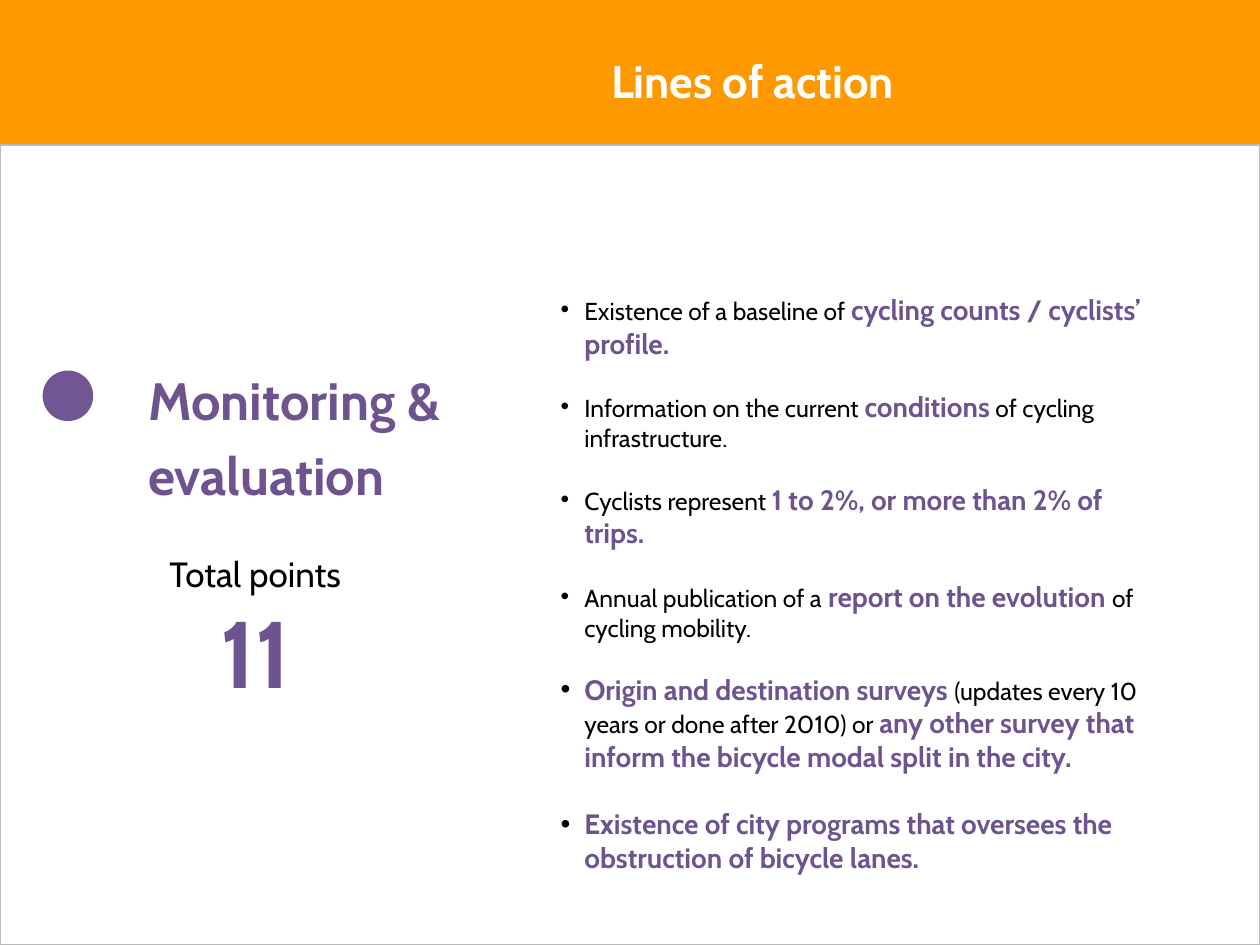
from lxml import etree
from pptx import Presentation
from pptx import util as u
from pptx.dml.color import RGBColor
from pptx.enum import shapes, text
from pptx.oxml.ns import qn

ORANGE = RGBColor(0xFF, 0x99, 0x00)
WHITE = RGBColor(0xFF, 0xFF, 0xFF)
GREY = RGBColor(0xBA, 0xBA, 0xBA)
BLACK = RGBColor(0x00, 0x00, 0x00)
PURPLE = RGBColor(0x6E, 0x53, 0x8F)
DOT_PURPLE = RGBColor(0x72, 0x56, 0x94)
FONT = "Cabin"

HEADING = "Lines of action"
TOPIC = "Monitoring & evaluation"
SCORE = [("Total points", 20, BLACK, False), ("11", 54, PURPLE, True)]
PLAIN, KEY = (14, BLACK, False), (16, PURPLE, True)
ACTIONS = [
    (0, [("Existence of a baseline of ", PLAIN),
         ("cycling counts / cyclists’ profile.", KEY)]),
    (17, [("Information on the current ", PLAIN), ("conditions", KEY),
          (" of cycling infrastructure.", PLAIN)]),
    (17, [("Cyclists represent ", PLAIN),
          ("1 to 2%, or more than 2% of trips.", KEY)]),
    (17, [("Annual publication of a", PLAIN),
          (" report on the evolution ", KEY),
          ("of cycling mobility.", PLAIN)]),
    (17, [("Origin and destination surveys ", KEY),
          ("(updates every 10 years or done after 2010) or ", PLAIN),
          ("any other survey that inform the bicycle modal split in the city.", KEY)]),
    (19.5, [("Existence of city programs that oversees the obstruction of "
             "bicycle lanes.", KEY)]),
]


def place(box, left, top, width, height):
    box.left, box.top = u.Cm(left), u.Cm(top)
    box.width, box.height = u.Cm(width), u.Cm(height)


def set_frame(box, inset, anchor=text.MSO_ANCHOR.TOP):
    frame = box.text_frame
    frame.word_wrap = True
    frame.auto_size = text.MSO_AUTO_SIZE.NONE
    frame.vertical_anchor = anchor
    frame.margin_left = frame.margin_right = u.Cm(0.25)
    frame.margin_top = frame.margin_bottom = u.Cm(inset)
    return frame


def style(font, size, color, bold):
    font.name, font.size, font.bold = FONT, u.Pt(size), bold
    font.color.rgb = color


def add_bullet(paragraph, color):
    props = paragraph._p.get_or_add_pPr()
    props.set("marL", str(u.Cm(0.48)))
    props.set("indent", str(-u.Cm(0.48)))
    tint = etree.SubElement(props, qn("a:buClr"))
    etree.SubElement(tint, qn("a:srgbClr"), val=str(color))
    etree.SubElement(props, qn("a:buChar"), char="•")


def add_plain_shape(slide, kind, fill, bounds, line=None):
    shape = slide.shapes.add_shape(kind, *(u.Cm(n) for n in bounds))
    shape.shadow.inherit = False
    shape.fill.solid()
    shape.fill.fore_color.rgb = fill
    if line is None:
        shape.line.fill.background()
    else:
        shape.line.color.rgb = line
        shape.line.width = u.Pt(1)
    return shape


def main():
    deck = Presentation()
    deck.slide_width, deck.slide_height = u.Cm(25.4), u.Cm(19.05)
    slide = deck.slides.add_slide(deck.slide_layouts[1])
    title, actions = slide.placeholders

    rect = shapes.MSO_SHAPE.RECTANGLE
    banner = add_plain_shape(slide, rect, ORANGE, (0, -0.08, 25.4, 19.13))
    page = add_plain_shape(slide, rect, WHITE, (0, 2.92, 25.4, 16.13), GREY)
    for backdrop in (page, banner):
        slide.shapes._spTree.insert(2, backdrop._element)

    place(title, 4.95, 0.94, 20.45, 1.37)
    heading = set_frame(title, 0.13, text.MSO_ANCHOR.MIDDLE).paragraphs[0]
    heading.text = HEADING
    heading.alignment = text.PP_ALIGN.CENTER
    style(heading.font, 26, WHITE, True)

    place(actions, 11.05, 5.77, 12.7, 11.63)
    frame = set_frame(actions, 0.13)
    for number, (gap, runs) in enumerate(ACTIONS):
        action = frame.add_paragraph() if number else frame.paragraphs[0]
        add_bullet(action, BLACK)
        action.space_before = u.Pt(gap)
        for words, look in runs:
            run = action.add_run()
            run.text = words
            style(run.font, *look)

    topic_box = slide.shapes.add_textbox(*map(u.Cm, (2.74, 6.91, 7.49, 3.15)))
    topic = set_frame(topic_box, 0.25).paragraphs[0]
    topic.text = TOPIC
    topic.line_spacing = 1.2
    style(topic.font, 30, PURPLE, True)

    score_box = slide.shapes.add_textbox(*map(u.Cm, (2.26, 11, 5.77, 3.43)))
    frame = set_frame(score_box, 0.13)
    for number, (words, *look) in enumerate(SCORE):
        score = frame.add_paragraph() if number else frame.paragraphs[0]
        score.text = words
        score.alignment = text.PP_ALIGN.CENTER
        style(score.font, *look)

    add_plain_shape(slide, shapes.MSO_SHAPE.OVAL, DOT_PURPLE, (0.86, 7.47, 1.02, 1.02))
    deck.save("out.pptx")


if __name__ == "__main__":
    main()
